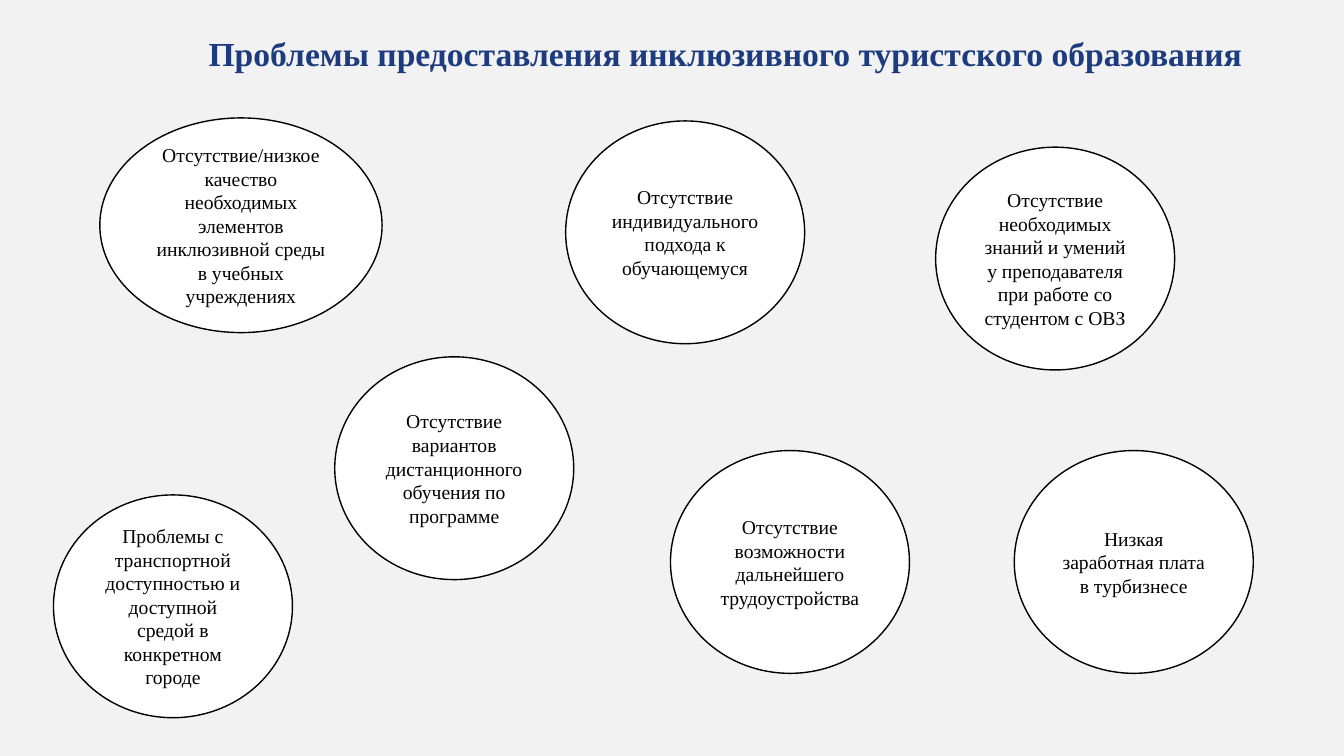
from dataclasses import dataclass

from pptx import Presentation
from pptx.dml.color import RGBColor
from pptx.enum.shapes import MSO_SHAPE
from pptx.enum.text import MSO_ANCHOR, MSO_AUTO_SIZE, PP_ALIGN
from pptx.slide import Slide
from pptx.text.text import TextFrame
from pptx.util import Inches, Pt

SLIDE_W, SLIDE_H = 13.33, 7.5
FONT = "Times New Roman"
BACKGROUND, NAVY, BLACK, WHITE = "F2F2F2", "1D3C7F", "000000", "FFFFFF"


@dataclass(frozen=True)
class Box:
    """Place and size in percent of the slide's width and height."""
    left: float
    top: float
    width: float = 17.78
    height: float = 29.47

    def emu(self) -> tuple[int, int, int, int]:
        return (Inches(SLIDE_W * self.left / 100), Inches(SLIDE_H * self.top / 100),
                Inches(SLIDE_W * self.width / 100), Inches(SLIDE_H * self.height / 100))


@dataclass(frozen=True)
class Problem:
    text: str
    box: Box


TITLE = "Проблемы предоставления инклюзивного туристского образования"
TITLE_BOX = Box(14.78, 3.73, 79.22, 6.67)
LOWER_ROW = 59.6

PROBLEMS = [
    Problem("Отсутствие/низкое качество необходимых элементов инклюзивной среды "
            "в учебных учреждениях", Box(7.43, 15.6, 21, 28.4)),
    Problem("Отсутствие вариантов дистанционного обучения по программе", Box(24.91, 47.2)),
    Problem("Отсутствие индивидуального подхода к обучающемуся", Box(42.09, 16)),
    Problem("Проблемы с транспортной доступностью и доступной средой "
            "в конкретном городе", Box(3.98, 65.47)),
    Problem("Отсутствие возможности дальнейшего трудоустройства", Box(49.89, LOWER_ROW)),
    Problem("Отсутствие необходимых знаний и умений у преподавателя "
            "при работе со студентом с ОВЗ", Box(69.62, 19.47)),
    Problem("Низкая заработная плата в турбизнесе", Box(75.47, LOWER_ROW)),
]


def rgb(value: str) -> RGBColor:
    return RGBColor.from_string(value)


def write(tf: TextFrame, text: str, size: float, color: str,
          align: PP_ALIGN, bold: bool = False) -> None:
    tf.text = text
    p = tf.paragraphs[0]
    p.alignment = align
    font = p.runs[0].font
    font.name, font.size, font.bold = FONT, Pt(size), bold
    font.color.rgb = rgb(color)


def add_title(s: Slide) -> None:
    tf = s.shapes.add_textbox(*TITLE_BOX.emu()).text_frame
    tf.word_wrap = False
    tf.auto_size = MSO_AUTO_SIZE.SHAPE_TO_FIT_TEXT
    write(tf, TITLE, 24, NAVY, PP_ALIGN.LEFT, bold=True)


def add_problem(s: Slide, problem: Problem) -> None:
    sp = s.shapes.add_shape(MSO_SHAPE.OVAL, *problem.box.emu())
    sp.shadow.inherit = False
    sp.fill.solid()
    sp.fill.fore_color.rgb = rgb(WHITE)
    sp.line.color.rgb = rgb(BLACK)
    sp.line.width = Pt(1)
    tf = sp.text_frame
    tf.word_wrap = True
    tf.vertical_anchor = MSO_ANCHOR.MIDDLE
    write(tf, problem.text, 14, BLACK, PP_ALIGN.CENTER)


def main() -> None:
    prs = Presentation()
    prs.slide_width, prs.slide_height = Inches(SLIDE_W), Inches(SLIDE_H)
    s = prs.slides.add_slide(prs.slide_layouts[6])

    # Background
    s.background.fill.solid()
    s.background.fill.fore_color.rgb = rgb(BACKGROUND)

    # Title and ovals
    add_title(s)
    for problem in PROBLEMS:
        add_problem(s, problem)

    prs.save("out.pptx")


if __name__ == "__main__":
    main()
